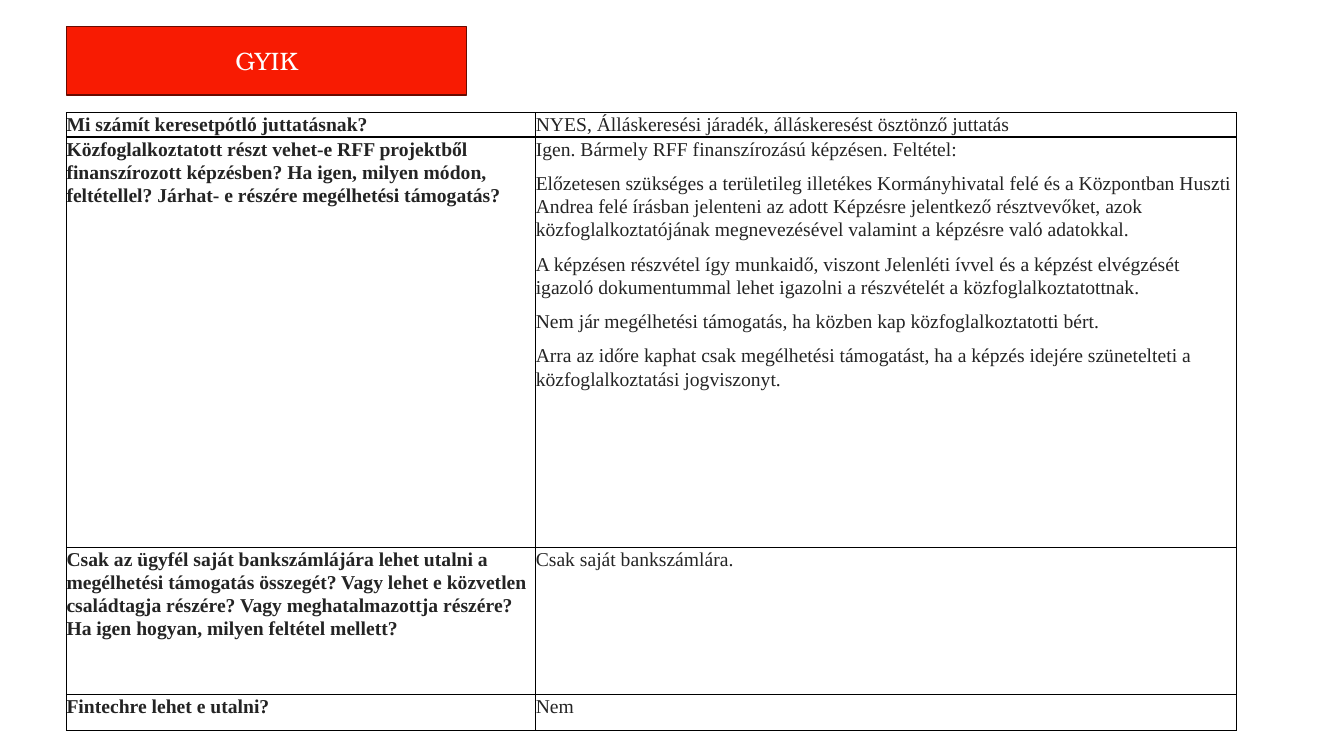
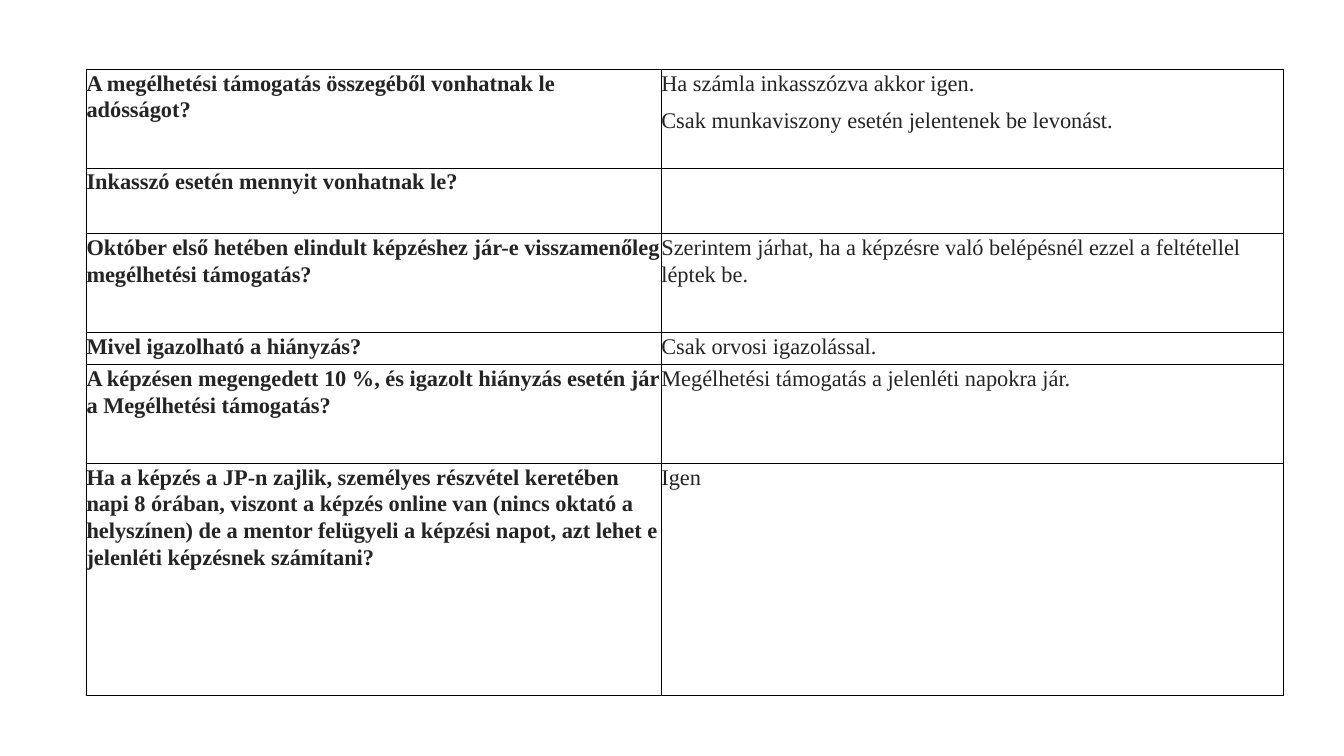
from lxml import etree
from pptx import Presentation
from pptx.dml.color import RGBColor
from pptx.enum import shapes, text
from pptx.oxml import ns
from pptx.util import Pt

WHITE = RGBColor(0xFF, 0xFF, 0xFF)
INK = RGBColor(0x24, 0x24, 0x24)
RED = RGBColor(0xF8, 0x1B, 0x02)
DARK_RED = RGBColor(0x68, 0x0B, 0x01)
BORDER = RGBColor(0x00, 0x00, 0x00)

CELL_FORMAT = {"margin_left": 0, "margin_right": 0, "margin_top": 0, "margin_bottom": 0}
PARAGRAPH_FORMAT = {"line_spacing": 1.07, "space_after": Pt(8)}


def add_borders(cell):
    tc_pr = cell._tc.get_or_add_tcPr()
    for side in ("a:lnL", "a:lnR", "a:lnT", "a:lnB"):
        ln = etree.SubElement(tc_pr, ns.qn(side), w=str(Pt(1)))
        fill = etree.SubElement(ln, ns.qn("a:solidFill"))
        etree.SubElement(fill, ns.qn("a:srgbClr"), val=str(BORDER))


def add_faq_table(s, left, top, widths, size, rows):
    """Each row is (height, question, answer paragraphs)."""
    height = sum(row[0] for row in rows)
    frame = s.shapes.add_table(len(rows), 2, Pt(left), Pt(top), Pt(sum(widths)), Pt(height))
    table = frame.table
    table.first_row = table.horz_banding = False
    for column, width in zip(table.columns, widths):
        column.width = Pt(width)
    for i, (row_height, question, answer) in enumerate(rows):
        table.rows[i].height = Pt(row_height)
        for j, paragraphs in enumerate(([question], answer)):
            cell = table.cell(i, j)
            for name, value in CELL_FORMAT.items():
                setattr(cell, name, value)
            add_borders(cell)
            cell.fill.solid()
            cell.fill.fore_color.rgb = WHITE
            tf = cell.text_frame
            for k, words in enumerate(paragraphs):
                p = tf.add_paragraph() if k else tf.paragraphs[0]
                for name, value in PARAGRAPH_FORMAT.items():
                    setattr(p, name, value)
                r = p.add_run()
                r.text = words
                font = {"name": "Times New Roman", "size": Pt(size), "bold": j == 0}
                for name, value in font.items():
                    setattr(r.font, name, value)
                r.font.color.rgb = INK


prs = Presentation()
prs.slide_width, prs.slide_height = Pt(960), Pt(540)
blank = prs.slide_layouts[6]

# Slide 1: title box and first questions
s = prs.slides.add_slide(blank)
add_faq_table(s, 47.5, 80.6, (335.2, 500.4), 14, [
    (17.3, "Mi számít keresetpótló juttatásnak?",
     ["NYES, Álláskeresési járadék, álláskeresést ösztönző juttatás"]),
    (293, "Közfoglalkoztatott részt vehet-e RFF projektből finanszírozott képzésben? "
     "Ha igen, milyen módon, feltétellel? Járhat- e részére megélhetési támogatás?",
     ["Igen. Bármely RFF finanszírozású képzésen. Feltétel:",
      "Előzetesen szükséges a területileg illetékes Kormányhivatal felé és a Központban "
      "Huszti Andrea felé írásban jelenteni az adott Képzésre jelentkező résztvevőket, azok "
      "közfoglalkoztatójának megnevezésével valamint a képzésre való adatokkal.",
      "A képzésen részvétel így munkaidő, viszont Jelenléti ívvel és a képzést elvégzését "
      "igazoló dokumentummal lehet igazolni a részvételét a közfoglalkoztatottnak.",
      "Nem jár megélhetési támogatás, ha közben kap közfoglalkoztatotti bért.",
      "Arra az időre kaphat csak megélhetési támogatást, ha a képzés idejére szünetelteti a "
      "közfoglalkoztatási jogviszonyt."]),
    (105, "Csak az ügyfél saját bankszámlájára lehet utalni a megélhetési támogatás összegét? "
     "Vagy lehet e közvetlen családtagja részére? Vagy meghatalmazottja részére? "
     "Ha igen hogyan, milyen feltétel mellett?",
     ["Csak saját bankszámlára."]),
    (25.9, "Fintechre lehet e utalni?", ["Nem"]),
])

sp = s.shapes.add_shape(shapes.MSO_SHAPE.RECTANGLE, Pt(47.5), Pt(19), Pt(285.8), Pt(49))
sp.shadow.inherit = False
sp.fill.solid()
sp.fill.fore_color.rgb = RED
sp.line.color.rgb = DARK_RED
sp.line.width = Pt(1.25)
tf = sp.text_frame
tf.vertical_anchor = text.MSO_ANCHOR.MIDDLE
p = tf.paragraphs[0]
p.alignment = text.PP_ALIGN.CENTER
r = p.add_run()
r.text = "GYIK"
for name, value in {"name": "TeX Gyre Bonum", "size": Pt(18)}.items():
    setattr(r.font, name, value)
r.font.color.rgb = WHITE

# Slide 2: further questions
s = prs.slides.add_slide(blank)
add_faq_table(s, 61.8, 49.6, (410.6, 444.2), 16, [
    (70.6, "A megélhetési támogatás összegéből vonhatnak le adósságot?",
     ["Ha számla inkasszózva akkor igen.",
      "Csak munkaviszony esetén jelentenek be levonást."]),
    (46.8, "Inkasszó esetén mennyit vonhatnak le?", []),
    (70.6, "Október első hetében elindult képzéshez jár-e visszamenőleg megélhetési támogatás?",
     ["Szerintem járhat, ha a képzésre való belépésnél ezzel a feltétellel léptek be."]),
    (23, "Mivel igazolható a hiányzás?", ["Csak orvosi igazolással."]),
    (70.6, "A képzésen megengedett 10 %, és igazolt hiányzás esetén jár a Megélhetési támogatás?",
     ["Megélhetési támogatás a jelenléti napokra jár."]),
    (165.8, "Ha a képzés a JP-n zajlik, személyes részvétel keretében napi 8 órában, viszont a "
     "képzés online van (nincs oktató a helyszínen) de a mentor felügyeli a képzési napot, "
     "azt lehet e jelenléti képzésnek számítani?",
     ["Igen"]),
])

prs.save("out.pptx")
